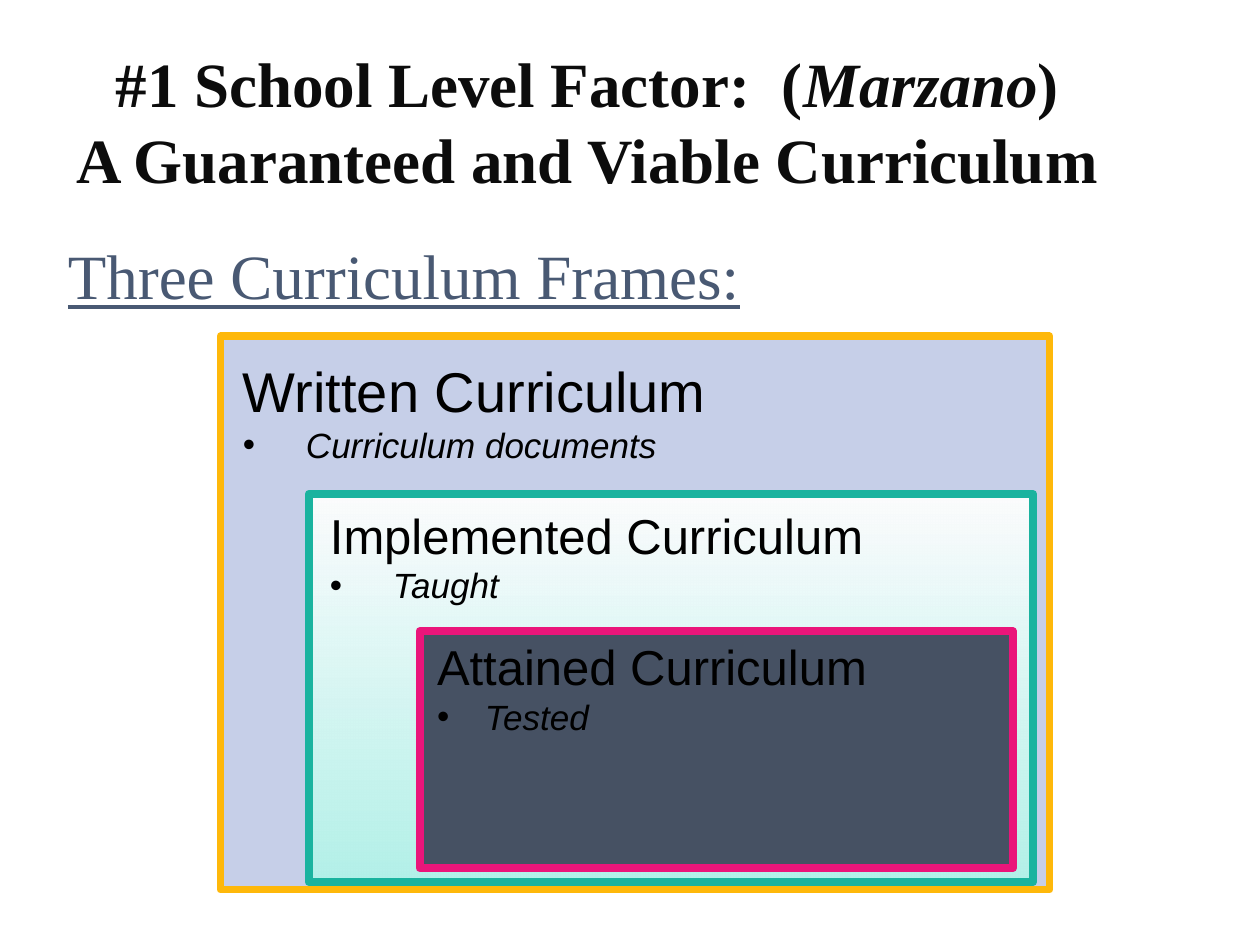
"""Build a slide of three nested curriculum frames."""
from lxml import etree
from pptx import Presentation
from pptx.dml.color import RGBColor
from pptx.enum import shapes, text
from pptx.oxml import ns
from pptx.util import Inches, Pt


def color(value):
    return RGBColor.from_string(value)


def add_text(place, paragraphs, font, ink):
    box = page.shapes.add_textbox(*map(Inches, place))
    frame = box.text_frame
    frame.word_wrap = True
    for index, (words, size, indent) in enumerate(paragraphs):
        para = frame.paragraphs[0] if index == 0 else frame.add_paragraph()
        para.text = words
        if indent:
            props = para._p.get_or_add_pPr()
            props.set("marL", str(Inches(indent)))
            props.set("indent", str(-Inches(indent)))
            tint = etree.SubElement(props, ns.qn("a:buClr"))
            etree.SubElement(tint, ns.qn("a:srgbClr"), val=ink)
            etree.SubElement(props, ns.qn("a:buFont"), typeface=font)
            etree.SubElement(props, ns.qn("a:buChar"), char="•")
        for span in para.runs:
            span.font.name = font
            span.font.size = Pt(size)
            span.font.color.rgb = color(ink)
            span.font.italic = bool(indent)
    return frame


deck = Presentation()
deck.slide_width, deck.slide_height = Inches(10), Inches(7.5)
page = deck.slides.add_slide(deck.slide_layouts[6])

title = add_text((0.37, 0.33, 8.58, 1.25),
                 [("#1 School Level Factor:  (", 36, 0)], "Times New Roman", "0C0C0C")
title.vertical_anchor = text.MSO_ANCHOR.MIDDLE
heading = title.paragraphs[0]
heading.alignment = text.PP_ALIGN.CENTER
for words in ("Marzano", ")", "A Guaranteed and Viable Curriculum"):
    if words.startswith("A "):
        heading.add_line_break()
    heading.add_run().text = words
for span in heading.runs:
    span.font.name = "Times New Roman"
    span.font.size = Pt(36)
    span.font.bold = True
    span.font.italic = span.text == "Marzano"
    span.font.color.rgb = color("0C0C0C")

subtitle = add_text((0.44, 1.83, 6.42, 0.71),
                    [("Three Curriculum Frames:", 36, 0)], "Times New Roman", "495973")
subtitle.paragraphs[0].runs[0].font.underline = True

frames = [
    ((1.75, 2.67, 6.58, 4.39), ["C6CFE8"], "FEB80A",
     (1.83, 2.78, 4.78, 0.98), "Written Curriculum", 32, "Curriculum documents", 0.5),
    ((2.45, 3.92, 5.75, 3.08), ["FFFFFF", "B3F1E9"], "1AB39F",
     (2.52, 3.96, 4.92, 0.91), "Implemented Curriculum", 28, "Taught", 0.5),
    ((3.33, 5.01, 4.71, 1.88), ["465163"], "EA157A",
     (3.37, 5, 3.92, 0.91), "Attained Curriculum", 28, "Tested", 0.38),
]
for place, fills, edge, label_place, name, size, detail, indent in frames:
    box = page.shapes.add_shape(shapes.MSO_SHAPE.RECTANGLE, *map(Inches, place))
    box.shadow.inherit = False
    if len(fills) == 1:
        box.fill.solid()
        box.fill.fore_color.rgb = color(fills[0])
    else:
        box.fill.gradient()
        box.fill.gradient_angle = 270
        for stop, value, position in zip(box.fill.gradient_stops, fills, (0, 1)):
            stop.color.rgb = color(value)
            stop.position = position
        first = box._element.spPr.find(".//" + ns.qn("a:srgbClr"))
        etree.SubElement(first, ns.qn("a:alpha"), val="94000")
    box.line.color.rgb = color(edge)
    box.line.width = Pt(4.5)
    etree.SubElement(box.line._get_or_add_ln(), ns.qn("a:round"))
    add_text(label_place, [(name, size, 0), (detail, 20, indent)], "Arial", "000000")

deck.save("out.pptx")
